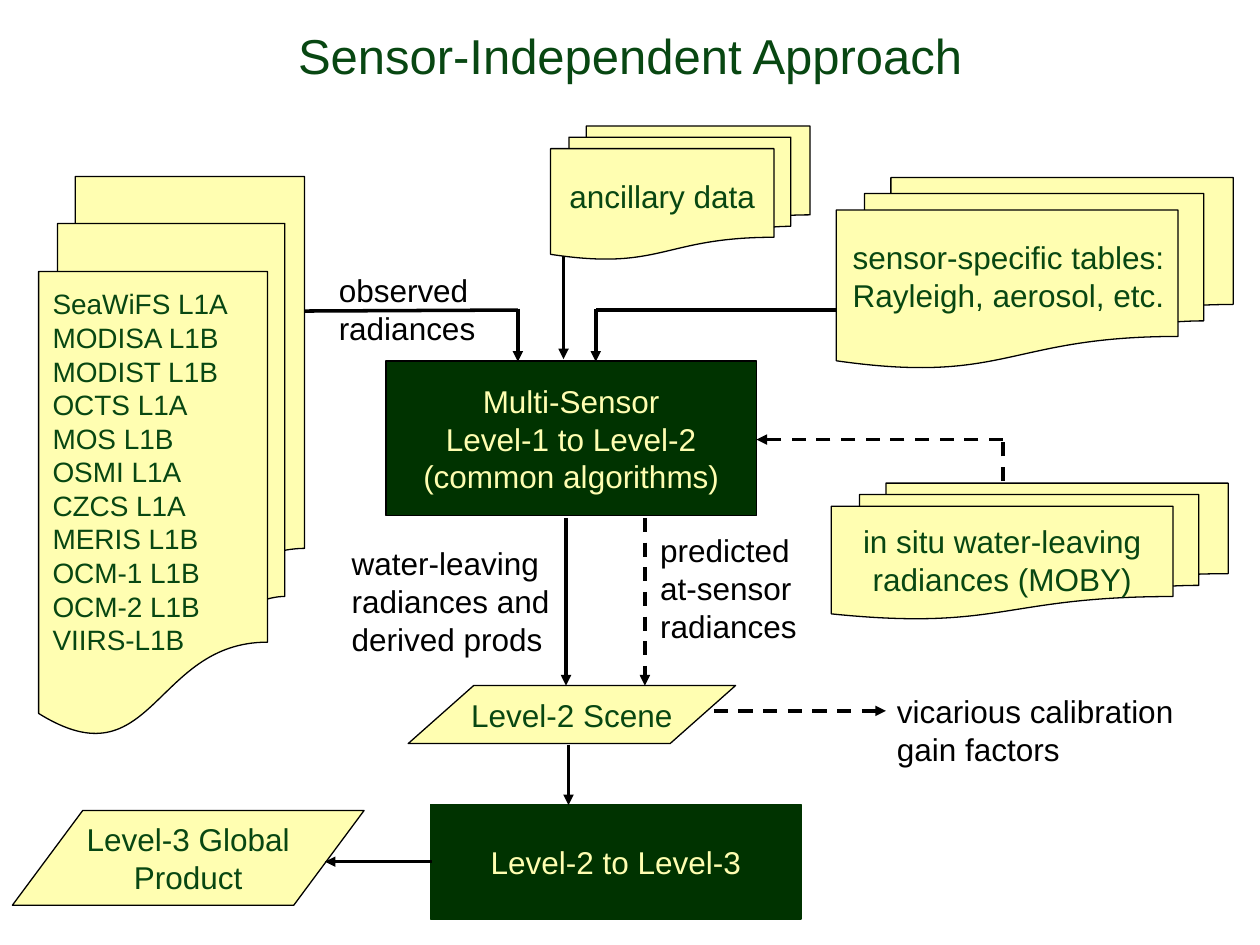
from lxml import etree
from pptx import Presentation
from pptx.dml.color import RGBColor
from pptx.enum.dml import MSO_LINE
from pptx.enum.shapes import MSO_CONNECTOR, MSO_SHAPE as SHAPE
from pptx.enum.text import MSO_ANCHOR, MSO_AUTO_SIZE, PP_ALIGN
from pptx.oxml.ns import qn
from pptx.util import Cm, Pt

BLACK = RGBColor(0x00, 0x00, 0x00)
GREEN = RGBColor(0x08, 0x47, 0x12)
DARK = RGBColor(0x00, 0x33, 0x00)
CREAM = RGBColor(0xFF, 0xFE, 0xB1)


def write(tf, text, size, color, align, wrap=False):
    tf.word_wrap = wrap
    tf.text = text
    for p in tf.paragraphs:
        p.alignment = align
        p.font.name = "Arial"
        p.font.size = Pt(size)
        p.font.color.rgb = color


prs = Presentation()
prs.slide_width, prs.slide_height = Cm(25.4), Cm(19.05)
s = prs.slides.add_slide(prs.slide_layouts[5])

# Title
title = s.shapes.title
title.left, title.top, title.width, title.height = Cm(1.27), Cm(0.22), Cm(22.86), Cm(1.78)
write(title.text_frame, "Sensor-Independent Approach", 28, GREEN, PP_ALIGN.CENTER)
title.text_frame.vertical_anchor = MSO_ANCHOR.MIDDLE

# Data stacks, process boxes and products
DOCS, DATA, BOX = SHAPE.FLOWCHART_MULTIDOCUMENT, SHAPE.FLOWCHART_DATA, SHAPE.RECTANGLE
nodes = [
    (DOCS, 16.86, 3.58, 8, 3.84, CREAM, BLACK, ""),
    (DOCS, 0.78, 3.56, 5.36, 11.25, CREAM, BLACK, ""),
    (DOCS, 11.1, 2.54, 5.23, 2.69, CREAM, BLACK, ""),
    (DOCS, 16.76, 9.74, 8, 2.74, CREAM, BLACK, "in situ water-leaving\nradiances (MOBY)"),
    (BOX, 7.78, 7.28, 7.47, 3.12, DARK, BLACK,
     "Multi-Sensor\nLevel-1 to Level-2\n(common algorithms)"),
    (BOX, 8.68, 16.22, 7.47, 2.31, DARK, DARK, "Level-2 to Level-3"),
    (DATA, 8.23, 13.82, 6.6, 1.17, CREAM, BLACK, "Level-2 Scene"),
    (DATA, 0.25, 16.34, 7.09, 1.91, CREAM, BLACK, "Level-3 Global\nProduct"),
]
for kind, x, y, w, h, fill, line, text in nodes:
    sp = s.shapes.add_shape(kind, Cm(x), Cm(y), Cm(w), Cm(h))
    sp.shadow.inherit = False
    sp.fill.solid()
    sp.fill.fore_color.rgb = fill
    sp.line.color.rgb = line
    sp.line.width = Pt(0.75)
    if text:
        write(sp.text_frame, text, 18, CREAM if fill == DARK else GREEN, PP_ALIGN.CENTER)
        sp.text_frame.vertical_anchor = MSO_ANCHOR.MIDDLE

# Flow lines: x1, y1, x2, y2, dashed, arrow at the end
flows = [
    (6.15, 6.27, 10.44, 6.25, False, False),
    (10.44, 6.22, 10.44, 7.29, False, True),
    (11.36, 5.16, 11.36, 7.24, False, True),
    (16.87, 6.25, 12.01, 6.25, False, False),
    (12.01, 6.22, 12.01, 7.29, False, True),
    (11.41, 10.44, 11.41, 13.82, False, True),
    (11.46, 15.01, 11.46, 16.23, False, True),
    (8.71, 17.37, 6.55, 17.37, False, True),
    (13, 10.44, 13, 13.82, True, True),
    (20.22, 9.7, 20.22, 8.86, True, False),
    (20.22, 8.86, 15.25, 8.86, True, True),
    (14.39, 14.33, 17.86, 14.33, True, True),
]
for x1, y1, x2, y2, dashed, arrow in flows:
    c = s.shapes.add_connector(MSO_CONNECTOR.STRAIGHT, Cm(x1), Cm(y1), Cm(x2), Cm(y2))
    c.line.color.rgb = BLACK
    c.line.width = Pt(2)
    if dashed:
        c.line.dash_style = MSO_LINE.DASH
    if arrow:
        etree.SubElement(c.line._get_or_add_ln(), qn("a:tailEnd"), type="triangle")
    etree.SubElement(c._element.spPr, qn("a:effectLst"))

# Labels, each box a little wider than its longest line
sensors = ["SeaWiFS L1A", "MODISA L1B", "MODIST L1B", "OCTS L1A", "MOS L1B", "OSMI L1A",
           "CZCS L1A", "MERIS L1B", "OCM-1 L1B", "OCM-2 L1B", "VIIRS-L1B"]
labels = [
    (0.81, 5.66, 4.3, 7.77, 16, GREEN, "\n".join(sensors)),
    (16.94, 4.67, 7.1, 1.78, 18, GREEN, "sensor-specific tables:\nRayleigh, aerosol, etc."),
    (11.23, 3.45, 4.5, 1.02, 18, GREEN, "ancillary data"),
    (6.58, 5.34, 3.6, 1.78, 18, BLACK, "observed\nradiances"),
    (6.84, 10.85, 4.9, 2.54, 18, BLACK, "water-leaving\nradiances and\nderived prods"),
    (13.06, 10.59, 3.6, 2.54, 18, BLACK, "predicted\nat-sensor\nradiances"),
    (17.83, 13.82, 6.4, 1.78, 18, BLACK, "vicarious calibration\ngain factors"),
]
for x, y, w, h, size, color, text in labels:
    tf = s.shapes.add_textbox(Cm(x), Cm(y), Cm(w), Cm(h)).text_frame
    write(tf, text, size, color, PP_ALIGN.LEFT, wrap=True)
    tf.auto_size = MSO_AUTO_SIZE.SHAPE_TO_FIT_TEXT

prs.save("out.pptx")
